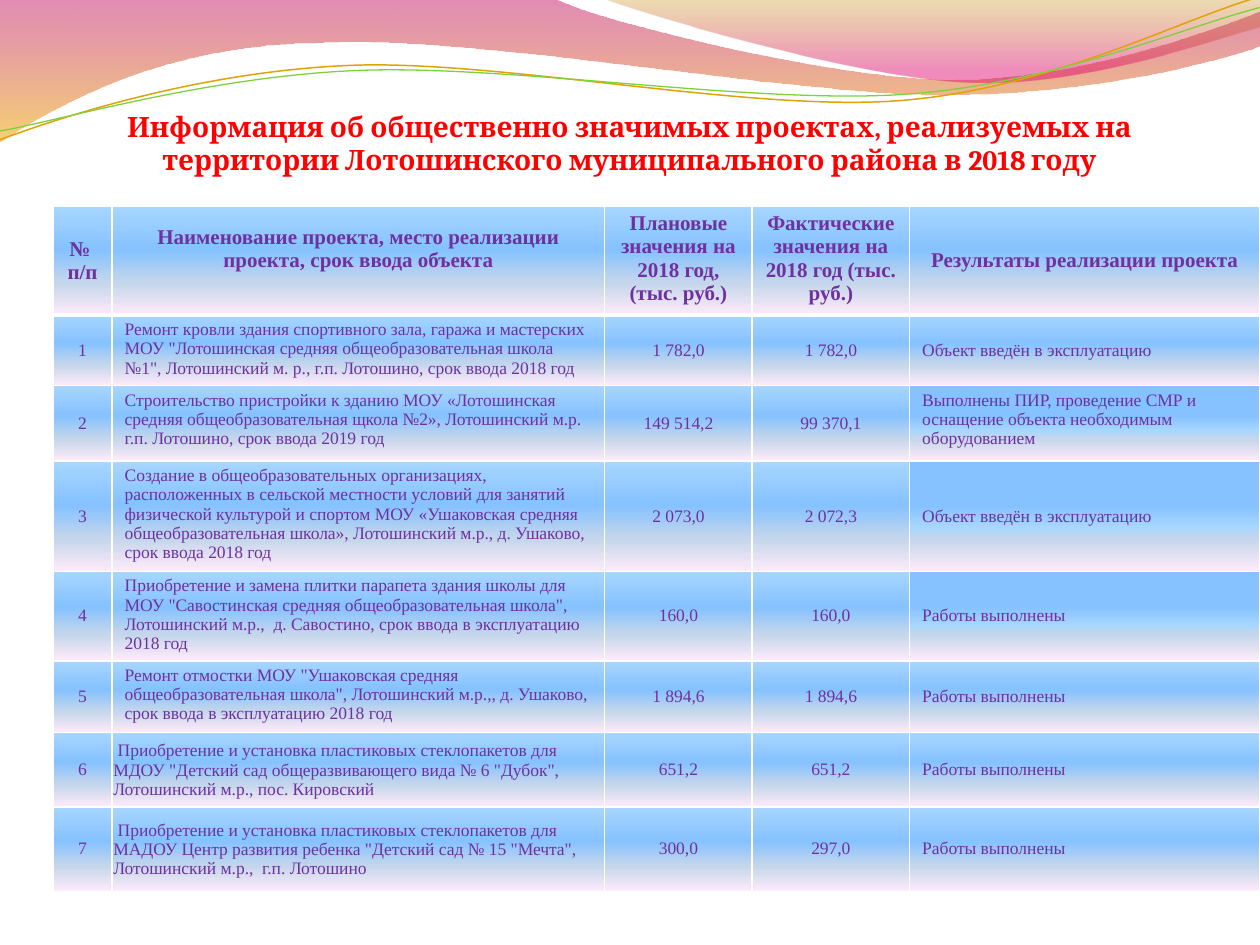
import math

import lxml.etree
import pptx
import pptx.dml.color
import pptx.enum.text
import pptx.oxml.ns
import pptx.util

Inches = pptx.util.Inches
Align = pptx.enum.text.PP_ALIGN
Anchor = pptx.enum.text.MSO_ANCHOR
qn = pptx.oxml.ns.qn


def paint(fill, *stops):
    """Fill with one hex colour, or downwards with (percent, hex, opacity) stops."""
    if len(stops) == 1:
        fill.solid()
        fill.fore_color.rgb = pptx.dml.color.RGBColor.from_string(stops[0])
        return
    fill.gradient()
    fill.gradient_angle = 270
    track = fill._xPr.find(qn("a:gradFill")).find(qn("a:gsLst"))
    for old in list(track):
        track.remove(old)
    for pos, tint, alpha in stops:
        stop = lxml.etree.SubElement(track, qn("a:gs"), pos=str(pos * 1000))
        color = lxml.etree.SubElement(stop, qn("a:srgbClr"), val=tint)
        if alpha < 100:
            lxml.etree.SubElement(color, qn("a:alpha"), val=str(alpha * 1000))


def text(frame, words, size=10, face="Times New Roman", tint="7030A0",
         bold=False, align=Align.LEFT):
    frame.word_wrap = True
    for i, line in enumerate(words.split("\n")):
        par = frame.add_paragraph() if i else frame.paragraphs[0]
        par.alignment = align
        run = par.add_run()
        run.text = line
        run.font.size = pptx.util.Pt(size)
        run.font.name = face
        run.font.bold = bold
        paint(run.font.fill, tint)


deck = pptx.Presentation()
deck.slide_width, deck.slide_height = Inches(10), Inches(7.5)
slide = deck.slides.add_slide(deck.slide_layouts[6])

# Waves: a start point, then steps of two numbers (line) or six (curve)
waves = [
    ([(0, -0.01), (4.4, -0.01), (4.76, 0.17, 6.64, 0.63, 7.58, 0.63),
      (8.53, 0.63, 9.58, 0.26, 10, 0.09), (10.01, 0.36),
      (9.83, 0.44, 8.7, 0.76, 7.46, 0.75), (6.22, 0.75, 3.82, 0.28, 2.57, 0.34),
      (1.29, 0.35, 0.46, 0.83, -0.01, 1.13)],
     [(0, "BD0059", 45), (100, "F0AB00", 55)], 0),
    ([(4.79, -0.01), (5.09, 0.11, 6.82, 0.62, 7.69, 0.65),
      (8.56, 0.69, 9.61, 0.32, 10, 0.21), (10, 0)],
     [(0, "C38B00", 30), (80, "E1006B", 45)], 0),
    ([(0, 1.11), (0.48, 0.93, 1.58, 0.57, 2.77, 0.52),
      (3.95, 0.47, 5.93, 0.89, 7.13, 0.8), (8.33, 0.71, 9.38, 0.15, 9.98, -0.02)],
     ["E0A209"], 0.85),
    ([(0, 1.04), (0.47, 0.96, 1.64, 0.61, 2.83, 0.56),
      (4.03, 0.51, 5.97, 0.83, 7.17, 0.75), (8.36, 0.67, 9.41, 0.21, 10, 0.06)],
     ["7FD13B"], 0.75),
]
tilt, mid = 2.7, (5, 0.58)
cos, sin = math.cos(math.radians(tilt)), math.sin(math.radians(tilt))
for steps, tints, width in waves:
    dots = [step[k:k + 2] for step in steps for k in range(0, len(step), 2)]
    if width:  # level the line here; the shape's rotation tilts it again
        gaps = [(x - mid[0], y - mid[1]) for x, y in dots]
        dots = [(mid[0] + x * cos - y * sin, mid[1] + x * sin + y * cos) for x, y in gaps]
    points = [(Inches(x), Inches(y)) for x, y in dots]
    pen = slide.shapes.build_freeform(*points[0])
    pen.add_line_segments(points[1:], close=not width)
    wave = pen.convert_to_shape()
    # Join each run of three line steps into one curve
    lines = iter(list(wave._element.iter(qn("a:lnTo"))))
    for step in steps[1:]:
        first = next(lines)
        if len(step) == 6:
            curve = lxml.etree.Element(qn("a:cubicBezTo"))
            first.addprevious(curve)
            for line in (first, next(lines), next(lines)):
                curve.append(line[0])
                line.getparent().remove(line)
    wave.shadow.inherit = False
    if width:
        wave.rotation = 360 - tilt
        wave.fill.background()
        paint(wave.line.fill, *tints)
        wave.line.width = pptx.util.Pt(width)
    else:
        paint(wave.fill, *tints)
        wave.line.fill.background()

title = slide.shapes.add_textbox(Inches(0.5), Inches(0.76), Inches(9), Inches(0.64))
frame = title.text_frame
frame.margin_left = frame.margin_right = frame.margin_bottom = 0
frame.vertical_anchor = Anchor.BOTTOM
text(frame, "Информация об общественно значимых проектах, реализуемых на территории "
     "Лотошинского муниципального района в 2018 году",
     size=16, face="Cambria", tint="FF0000", bold=True, align=Align.CENTER)

ready, done = "Объект введён в эксплуатацию", "Работы выполнены"
rows = [
    ("№  п/п", "Наименование проекта, место реализации проекта, срок ввода объекта",
     "Плановые значения на 2018 год, (тыс. руб.)",
     "Фактические значения на 2018 год (тыс. руб.)", "Результаты реализации проекта"),
    ("1", 'Ремонт кровли здания спортивного зала, гаража и мастерских МОУ "Лотошинская '
     'средняя общеобразовательная школа №1", Лотошинский м. р., г.п. Лотошино, '
     'срок ввода 2018 год', "1 782,0", "1 782,0", ready),
    ("2", "Строительство пристройки к зданию МОУ «Лотошинская средняя "
     "общеобразовательная щкола №2», Лотошинский м.р.\n"
     "г.п. Лотошино, срок ввода 2019 год", "149 514,2", "99 370,1",
     "Выполнены ПИР, проведение СМР и оснащение объекта необходимым оборудованием"),
    ("3", "Создание в общеобразовательных организациях, расположенных в сельской "
     "местности условий для занятий физической культурой и спортом МОУ «Ушаковская "
     "средняя общеобразовательная школа», Лотошинский м.р., д. Ушаково, "
     "срок ввода 2018 год", "2 073,0", "2 072,3", ready),
    ("4", 'Приобретение и замена плитки парапета здания школы для МОУ "Савостинская '
     'средняя общеобразовательная школа", Лотошинский м.р.,  д. Савостино, '
     'срок ввода в эксплуатацию 2018 год', "160,0", "160,0", done),
    ("5", 'Ремонт отмостки МОУ "Ушаковская средняя общеобразовательная школа", '
     'Лотошинский м.р.,, д. Ушаково, срок ввода в эксплуатацию 2018 год',
     "1 894,6", "1 894,6", done),
    ("6", ' Приобретение и установка пластиковых стеклопакетов для МДОУ "Детский сад '
     'общеразвивающего вида № 6 "Дубок", Лотошинский м.р., пос. Кировский',
     "651,2", "651,2", done),
    ("7", ' Приобретение и установка пластиковых стеклопакетов для МАДОУ Центр развития '
     'ребенка "Детский сад № 15 "Мечта", Лотошинский м.р.,  г.п. Лотошино',
     "300,0", "297,0", done),
]
widths = [0.47, 3.91, 1.17, 1.25, 2.78]
heights = [0.86, 0.56, 0.6, 0.87, 0.71, 0.57, 0.59, 0.67]
sky = [(0, "A7D6FF", 100), (40, "85C2FF", 100), (70, "C4D6EB", 100), (100, "FFEBFA", 100)]
deep = [(40, "85C2FF", 100), (60, "A7D6FF", 100)] + sky[2:]
tops = {(0, 2), (0, 3), (2, 4)} | {(r, 1) for r in range(1, 6)}

table = slide.shapes.add_table(len(rows), len(widths), Inches(0.42), Inches(1.64),
                               Inches(sum(widths)), Inches(sum(heights))).table
for col, width in zip(table.columns, widths):
    col.width = Inches(width)
for r, row in enumerate(rows):
    table.rows[r].height = Inches(heights[r])
    for c, words in enumerate(row):
        cell = table.cell(r, c)
        props = cell._tc.get_or_add_tcPr()
        for side in "LRTB":
            thick = 3 if (r, side) in ((0, "B"), (1, "T")) else 1
            edge = lxml.etree.SubElement(props, qn("a:ln" + side), w=str(thick * 12700))
            solid = lxml.etree.SubElement(edge, qn("a:solidFill"))
            lxml.etree.SubElement(solid, qn("a:srgbClr"), val="FFFFFF")
        paint(cell.fill, *(deep if c == 4 and r in (2, 3, 4) else sky))
        cell.vertical_anchor = Anchor.MIDDLE
        if (r, c) in tops:
            cell.vertical_anchor = Anchor.TOP
            cell.margin_top, cell.margin_bottom = Inches(0.04), 0
        elif c == 1 and r:
            cell.margin_left = cell.margin_right = cell.margin_top = Inches(0.01)
            cell.margin_bottom = 0
        elif c == 1:
            cell.margin_bottom = Inches(0.24)
        text(cell.text_frame, words, size=10 if r else 12, bold=r == 0,
             align=Align.LEFT if r and c in (1, 4) else Align.CENTER)

deck.save("out.pptx")
